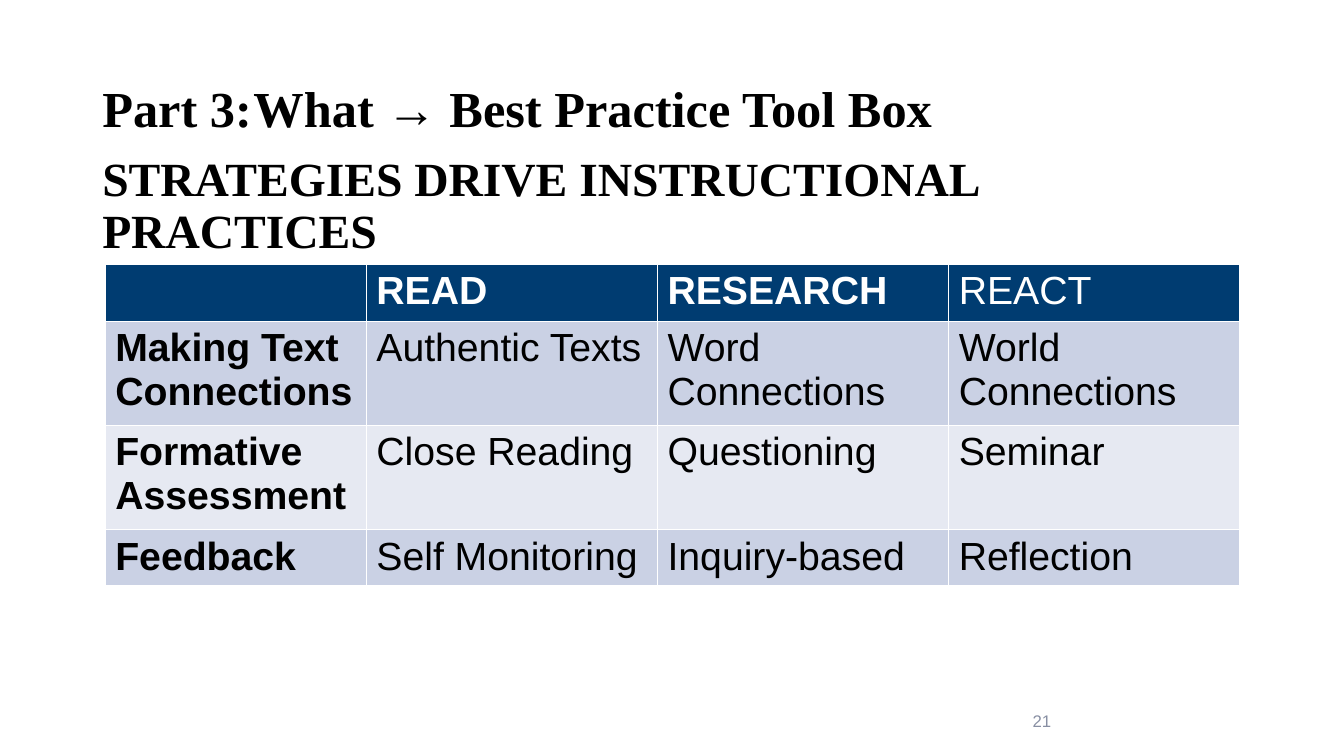
from pptx import Presentation
from pptx.dml.color import RGBColor
from pptx.enum import text
from pptx.oxml import ns, xmlchemy
from pptx.util import Pt


def colour(value):
    return RGBColor.from_string(value)


class StrategySlide:
    heading_font = "Times New Roman"
    body_font = "Arial"
    ink = "000000"
    white = "FFFFFF"
    header_fill = "003C71"
    band_fills = ("CAD1E4", "E6E9F2")
    page_ink = "888FA3"

    def __init__(self, deck):
        self.slide = deck.slides.add_slide(deck.slide_layouts[6])

    def style(self, paragraph, font, size, ink, bold=False):
        paragraph.font.name = font
        paragraph.font.size = Pt(size)
        paragraph.font.color.rgb = colour(ink)
        paragraph.font.bold = bold

    def label(self, words, left, top, width, height):
        frame = self.slide.shapes.add_textbox(
            Pt(left), Pt(top), Pt(width), Pt(height)).text_frame
        frame.word_wrap = True
        frame.vertical_anchor = text.MSO_ANCHOR.MIDDLE
        paragraph = frame.paragraphs[0]
        paragraph.add_run().text = words
        return paragraph

    def heading(self, words, top, size, spacing, before=0):
        paragraph = self.label(words, 66, top, 828, 104.4)
        paragraph.line_spacing = spacing
        paragraph.space_before = Pt(before)
        self.style(paragraph, self.heading_font, size, self.ink, True)

    def page_number(self, number):
        paragraph = self.label(number, 678, 500.4, 80, 28.8)
        paragraph.alignment = text.PP_ALIGN.RIGHT
        self.style(paragraph, self.body_font, 12, self.page_ink)

    def borders(self, cell, bottom):
        properties = cell._tc.get_or_add_tcPr()
        widths = {"lnL": 1, "lnR": 1, "lnT": 1, "lnB": bottom}
        for position, (side, width) in enumerate(widths.items()):
            line = xmlchemy.OxmlElement(f"a:{side}")
            line.set("w", str(Pt(width)))
            fill = xmlchemy.OxmlElement("a:solidFill")
            shade = xmlchemy.OxmlElement("a:srgbClr")
            shade.set("val", self.white)
            fill.append(shade)
            line.append(fill)
            properties.insert(position, line)

    def table(self, rows, left, top, widths, row_height):
        grid = self.slide.shapes.add_table(
            len(rows), len(widths), Pt(left), Pt(top),
            Pt(sum(widths)), Pt(row_height * len(rows))).table
        for column, width in zip(grid.columns, widths):
            column.width = Pt(width)
        for r, row in enumerate(rows):
            grid.rows[r].height = Pt(row_height)
            for c, words in enumerate(row):
                cell = grid.cell(r, c)
                cell.text = words
                cell.fill.solid()
                cell.fill.fore_color.rgb = colour(
                    self.band_fills[(r - 1) % 2] if r else self.header_fill)
                bold = c == 0 or (r == 0 and words != "REACT")
                self.style(cell.text_frame.paragraphs[0], self.body_font, 28,
                           self.ink if r else self.white, bold)
                self.borders(cell, 3 if r == len(rows) - 1 else 1)


def main():
    deck = Presentation()
    deck.slide_width, deck.slide_height = Pt(960), Pt(540)
    strategies = [
        ("", "READ", "RESEARCH", "REACT"),
        ("Making Text Connections", "Authentic Texts", "Word Connections", "World Connections"),
        ("Formative Assessment", "Close Reading", "Questioning", "Seminar"),
        ("Feedback", "Self Monitoring", "Inquiry-based", "Reflection"),
    ]
    page = StrategySlide(deck)
    page.heading("STRATEGIES DRIVE INSTRUCTIONAL PRACTICES", 95.8, 34, 0.9)
    page.page_number("21")
    page.table(strategies, 75.2, 188.6, (186.5, 208, 208, 208), 31)
    page.heading("Part 3:\tWhat → Best Practice Tool Box", 28.8, 36, 0.8, 10)
    deck.save("out.pptx")


if __name__ == "__main__":
    main()
